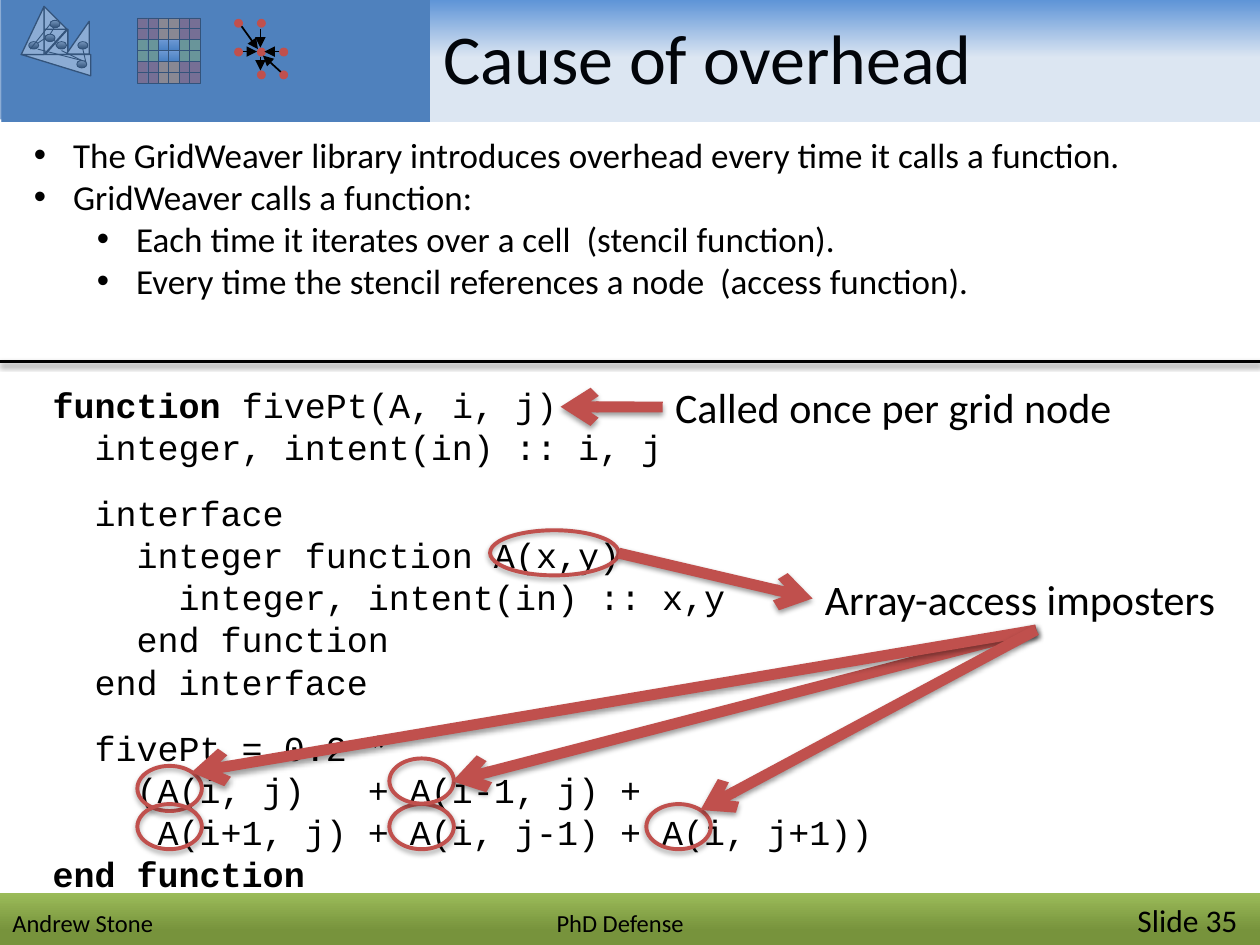
from lxml import etree
from pptx import Presentation
from pptx.dml.color import RGBColor
from pptx.enum.shapes import MSO_CONNECTOR, MSO_SHAPE
from pptx.enum.text import MSO_ANCHOR, MSO_AUTO_SIZE, PP_ALIGN
from pptx.oxml.ns import qn
from pptx.util import Cm, Pt

RECT, OVAL, TRIANGLE = MSO_SHAPE.RECTANGLE, MSO_SHAPE.OVAL, MSO_SHAPE.RIGHT_TRIANGLE
STRAIGHT = MSO_CONNECTOR.STRAIGHT
TOP, MIDDLE = MSO_ANCHOR.TOP, MSO_ANCHOR.MIDDLE
LEFT, NO_AUTOSIZE = PP_ALIGN.LEFT, MSO_AUTO_SIZE.NONE
SIDE_LEFT, SIDE_BOTTOM = 1, 2

BLACK, WHITE, RED, BLUE = "000000", "FFFFFF", "C0504D", "4F81BD"
ORANGE, GREEN = "F79646", "9BBB59"
SKY = [(0, "558ED5"), (49, "DCE6F2"), (100, "DCE6F2")]
GRASS = [(0, GREEN), (70, "77933C")]
NODE_GREY = [(0, BLACK), (100, "BDBDBD")]
CELL_BLUE = [(0, "3F80CE"), (100, "A4C4FF")]

BULLETS = [
    (0, "The GridWeaver library introduces overhead every time it calls a function."),
    (0, "GridWeaver calls a function:"),
    (1, "Each time it iterates over a cell  (stencil function)."),
    (1, "Every time the stencil references a node  (access function)."),
]
# Blocks of code lines; each line is a list of (text, bold) runs
CODE = [
    [[("function ", True), ("fivePt(A, i, j)", False)],
     [("  integer, intent(in) :: i, j", False)]],
    [[("  interface", False)],
     [("    integer function A(x,y)", False)],
     [("      integer, intent(in) :: x,y", False)],
     [("    end function", False)],
     [("  end interface", False)]],
    [[("  fivePt = 0.2 *", False)],
     [("    (A(i, j)   + A(i-1, j) +", False)],
     [("     A(i+1, j) + A(i, j-1) + A(i, j+1))", False)],
     [("end function", True)]],
]


def rgb(value):
    return RGBColor.from_string(value)


def sub(parent, tag, **attributes):
    return etree.SubElement(parent, qn(tag), {k: str(v) for k, v in attributes.items()})


def add_shadow(effects, opacity, distance):
    shadow = sub(effects, "a:outerShdw", blurRad=Pt(3.1), dist=Pt(distance),
                 dir=5400000, rotWithShape=0)
    sub(sub(shadow, "a:srgbClr", val=BLACK), "a:alpha", val=opacity * 1000)


def fill_gradient(shape, stops, angle):
    shape.fill.background()
    properties = shape._element.spPr
    gradient = etree.Element(qn("a:gradFill"), rotWithShape="1")
    stop_list = sub(gradient, "a:gsLst")
    for position, color in stops:
        sub(sub(stop_list, "a:gs", pos=position * 1000), "a:srgbClr", val=color)
    sub(gradient, "a:lin", ang=angle * 60000, scaled=0)
    properties.replace(properties.find(qn("a:noFill")), gradient)


def add_shape(slide, kind, x, y, w, h, fill=None, angle=90, line=None, width=0.75,
              opacity=None, shadow=False, flip=""):
    shape = slide.shapes.add_shape(kind, Cm(x), Cm(y), Cm(w), Cm(h))
    properties = shape._element.spPr
    if isinstance(fill, list):
        fill_gradient(shape, fill, angle)
    elif fill:
        shape.fill.solid()
        shape.fill.fore_color.rgb = rgb(fill)
        if opacity:
            color = properties.find(qn("a:solidFill")).find(qn("a:srgbClr"))
            sub(color, "a:alpha", val=opacity * 1000)
    else:
        shape.fill.background()
    if line:
        shape.line.color.rgb = rgb(line)
        shape.line.width = Pt(width)
    else:
        shape.line.fill.background()
    shape.shadow.inherit = False
    if shadow:
        add_shadow(properties.find(qn("a:effectLst")), 35, 1.8)
    for axis in flip:
        properties.find(qn("a:xfrm")).set("flip" + axis, "1")
    return shape


def add_line(slide, x1, y1, x2, y2, color=BLACK, width=0.5, head=None, shadow=False):
    line = slide.shapes.add_connector(STRAIGHT, Cm(x1), Cm(y1), Cm(x2), Cm(y2))
    line.line.color.rgb = rgb(color)
    line.line.width = Pt(width)
    properties = line._element.spPr
    if head:
        sub(properties.find(qn("a:ln")), "a:tailEnd", type=head)
    effects = sub(properties, "a:effectLst")
    if shadow:
        add_shadow(effects, 38, 1.6)
    return line


def add_text(paragraph, text, size=20, font="Calibri", color=BLACK, bold=False):
    run = paragraph.add_run()
    run.text = text
    run.font.size, run.font.name, run.font.bold = Pt(size), font, bold
    run.font.color.rgb = rgb(color)


def setup_frame(shape, anchor=TOP, wrap=True):
    frame = shape.text_frame
    frame.word_wrap, frame.auto_size, frame.vertical_anchor = wrap, NO_AUTOSIZE, anchor
    return frame


def place(slide, shape, x, y, w, h):
    shape.left, shape.top, shape.width, shape.height = Cm(x), Cm(y), Cm(w), Cm(h)
    slide.shapes._spTree.append(shape._element)  # bring to front


def add_mesh_icon(slide, x, y):
    triangles = [(.48, .46, .46, .51, "H"), (.46, .46, .46, .51, "V"),
                 (0, .97, 1.4, .43, "HV"), (.46, 0, .46, .46, ""),
                 (0, 0, .46, .97, "H"), (.91, .3, .46, .66, "H")]
    for dx, dy, w, h, flip in triangles:
        add_shape(slide, TRIANGLE, x + dx, y + dy, w, h, WHITE, line=BLACK, flip=flip)
    for dx, dy in [(1.12, 1.09), (.71, .71), (.58, .28), (.48, .56), (1.14, .71), (.15, .71)]:
        add_shape(slide, OVAL, x + dx, y + dy, .2, .15, NODE_GREY, 270, BLACK, .5)
    links = [(1.22, 1.09, .33, .86), (.18, .86, .58, .36), (.33, .74, .48, .64),
             (.66, .43, .58, .56), (.66, .64, .71, .81), (1.22, 1.09, .81, .89),
             (1.3, 1.12, 1.24, .86)]
    for x1, y1, x2, y2 in links:
        add_line(slide, x + x1, y + y1, x + x2, y + y2)


def add_grid_icon(slide, x, y, cell_w=.21, cell_h=.22):
    for row in range(6):
        for col in range(6):
            middle_row, middle_col = row // 2 == 1, col // 2 == 1
            if middle_row:
                fill = CELL_BLUE if middle_col else GREEN
            else:
                fill = ORANGE if middle_col else RED
            add_shape(slide, RECT, x + col * cell_w, y + row * cell_h, cell_w, cell_h,
                      fill, 270, BLACK, .25)


def add_stencil_icon(slide, x, y):
    columns, rows = (0, .46, .91), (0, .58, 1.04)
    for col, row in [(0, 0), (1, 0), (0, 1), (1, 1), (2, 1), (1, 2), (2, 2)]:
        add_shape(slide, OVAL, x + columns[col], y + rows[row], .18, .18, RED)
    arrows = [(.53, .2, .53, .58), (.15, .15, .48, .61), (.18, .66, .46, .66),
              (.91, .66, .61, .66), (.94, 1.07, .58, .74), (.53, .76, .53, 1.04)]
    for x1, y1, x2, y2 in arrows:
        add_line(slide, x + x1, y + y1, x + x2, y + y2, width=1, head="triangle")


def add_header(slide, x, y, w, h):
    add_shape(slide, RECT, x, y, w, h, SKY)
    add_shape(slide, RECT, x, y, 8.64, h, BLUE)
    add_mesh_icon(slide, x + .4, y + .21)
    add_grid_icon(slide, x + 2.74, y + .44)
    add_stencil_icon(slide, x + 4.69, y + .46)
    # Veils that dim the icons
    for dx, dy, veil_w in [(-.05, 0, 2.16), (2.1, .05, 2.16), (6.04, 0, 2.6)]:
        add_shape(slide, RECT, x + dx, y + dy, veil_w, 2.49, BLUE, opacity=65)
    title = slide.shapes.title
    place(slide, title, x + 8.66, y - .07, 17.15, 2.57)
    heading = setup_frame(title, MIDDLE).paragraphs[0]
    heading.alignment = LEFT
    add_text(heading, "Cause of overhead", size=40, color="02050A")


def add_bullets(slide, x, y, w, h):
    body = slide.placeholders[1]
    place(slide, body, x, y, w, h)
    frame = setup_frame(body, wrap=False)
    for i, (level, text) in enumerate(BULLETS):
        paragraph = frame.add_paragraph() if i else frame.paragraphs[0]
        paragraph.level, paragraph.alignment = level, LEFT
        paragraph.space_before = Pt(0)
        properties = paragraph._p.get_or_add_pPr()
        properties.set("marL", str(Cm(.79 + 1.27 * level)))
        properties.set("indent", str(-Cm(.79)))
        sub(properties, "a:buFont", typeface="Arial")
        sub(properties, "a:buChar", char="•")
        add_text(paragraph, text)


def add_note(slide, text, x, y, w):
    note = slide.shapes.add_textbox(Cm(x), Cm(y), Cm(w), Cm(1.27))
    add_text(setup_frame(note).paragraphs[0], text, size=24)
    return note


def add_code(slide, x, y, w, h):
    listing = slide.shapes.add_textbox(Cm(x), Cm(y + .03), Cm(w), Cm(h))
    frame = setup_frame(listing)
    lines = [(line, b > 0 and n == 0) for b, block in enumerate(CODE)
             for n, line in enumerate(block)]
    for i, (line, starts_block) in enumerate(lines):
        paragraph = frame.add_paragraph() if i else frame.paragraphs[0]
        paragraph.line_spacing = Pt(24.1)
        paragraph.space_before = Pt(13.6 if starts_block else 0)
        for text, bold in line:
            add_text(paragraph, text, font="Courier New", bold=bold)

    # Rings round the array accesses
    rings = [(9.07, 3.12, 2.59), (12.22, 8.64, 1.3), (7.04, 8.64, 1.3),
             (7.04, 7.72, 1.3), (1.96, 7.87, 1.3), (1.96, 8.64, 1.3)]
    for dx, dy, ring_w in rings:
        add_shape(slide, OVAL, x + dx, y + dy, ring_w, .91, line=RED, width=2.25, shadow=True)

    # Notes and their arrows
    def arrow(x1, y1, x2, y2):
        return add_line(slide, x + x1, y + y1, x + x2, y + y2, RED, 6.25, "arrow", True)

    called = add_note(slide, "Called once per grid node", x + 12.55, y, 10)
    imposters = add_note(slide, "Array-access imposters", x + 15.57, y + 3.86, 9.02)
    arrow(12.55, .63, 10.49, .63).begin_connect(called, SIDE_LEFT)
    arrow(11.66, 3.58, 15.57, 4.5).end_connect(imposters, SIDE_LEFT)
    for tip_x, tip_y in [(8.31, 8.18), (3.05, 8), (13.31, 8.76)]:
        arrow(20.08, 5.13, tip_x, tip_y).begin_connect(imposters, SIDE_BOTTOM)


def add_footer(slide, x, y, w, h):
    band = add_shape(slide, RECT, x, y, w, h, GRASS)
    paragraph = setup_frame(band, MIDDLE).paragraphs[0]
    paragraph.alignment = LEFT
    tabs = sub(paragraph._p.get_or_add_pPr(), "a:tabLst")
    for position in (10.97, 22.68):
        sub(tabs, "a:tab", pos=Cm(position), algn="l")
    add_text(paragraph, "Andrew Stone\tPhD Defense\t", size=14)
    add_text(paragraph, "Slide 35", size=18)


def main():
    deck = Presentation()
    deck.slide_width, deck.slide_height = Cm(25.4), Cm(19.05)
    slide = deck.slides.add_slide(deck.slide_layouts[1])
    add_code(slide, .81, 7.57, 24.21, 10.59)
    add_header(slide, .03, -.08, 25.4, 2.54)
    add_footer(slide, 0, 18.01, 25.4, 1.07)
    add_line(slide, 25.4, 7.29, 0, 7.29, width=2, shadow=True)
    add_bullets(slide, .43, 2.57, 22.45, 3.68)
    deck.save("out.pptx")


if __name__ == "__main__":
    main()
